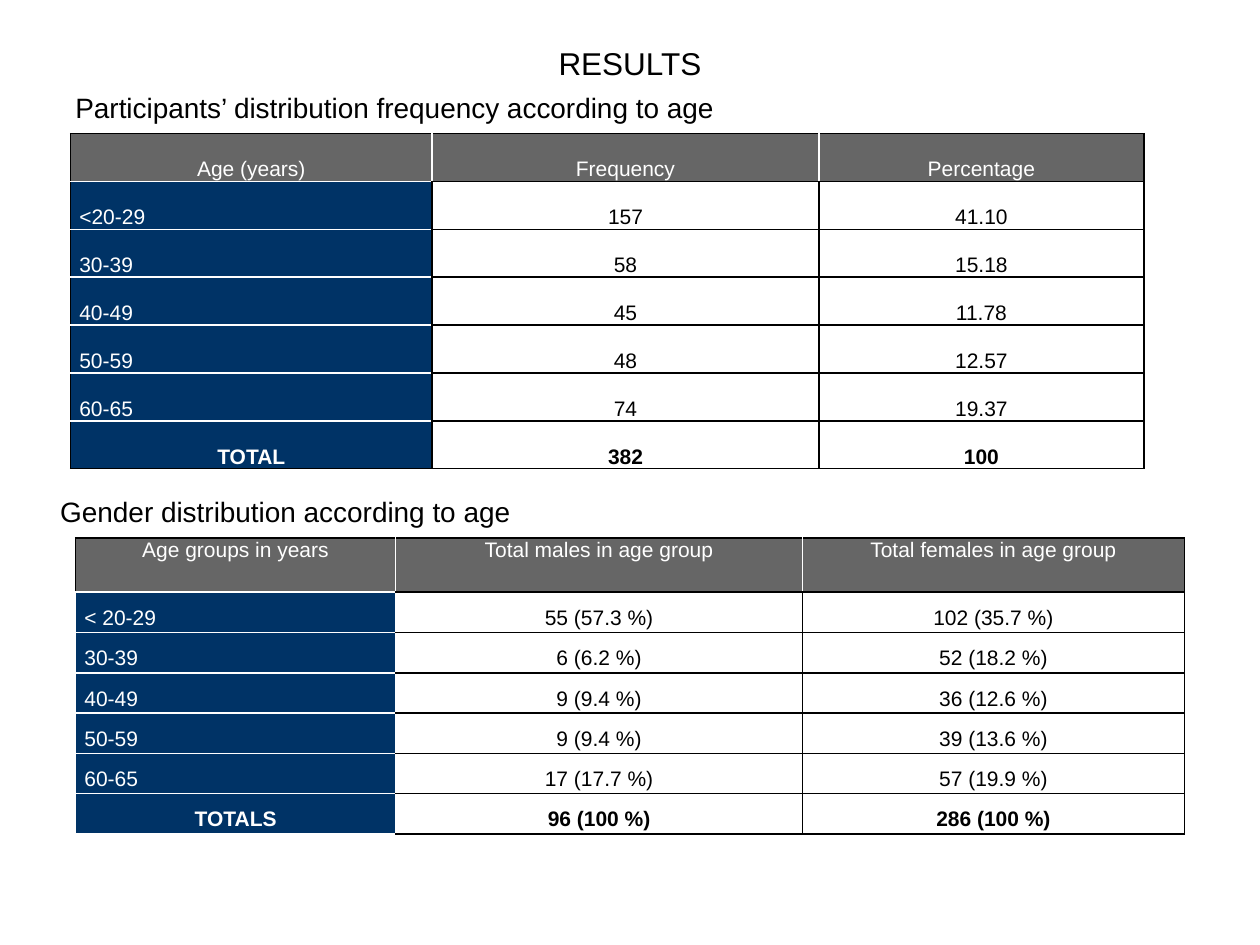
import dataclasses
import typing

import lxml.etree
import pptx
import pptx.dml.color
import pptx.enum.text
import pptx.oxml
import pptx.oxml.ns
import pptx.util

ALIGN = pptx.enum.text.PP_ALIGN
ANCHOR = pptx.enum.text.MSO_ANCHOR


@dataclasses.dataclass(frozen=True)
class Theme:
    font: str = "Arial"
    black: str = "000000"
    white: str = "FFFFFF"
    head: str = "666666"
    key: str = "003366"
    title: int = 18
    label: int = 16
    cell: int = 12
    line: int = 1


THEME = Theme()


# The slide is a grid of 100 columns and 75 rows
COLS, ROWS = 100, 75
UNIT = pptx.util.Inches(10) // COLS


class Box(typing.NamedTuple):
    left: float
    top: float
    width: float
    height: float


@dataclasses.dataclass(frozen=True)
class Grid:
    left: float
    top: float
    widths: tuple[float, ...]
    head: float  # height of the header row
    row: float  # height of every other row
    side: str  # colour of the outline of the key column
    anchors: tuple  # header row, other rows
    spaces: tuple[float, float]  # line spacing: header row, other rows
    data: tuple[tuple[str, ...], ...]


AGES = Grid(
    5.6, 10.6, (28.7, 30.7, 25.8), 3.8, 3.8, THEME.black,
    (ANCHOR.BOTTOM, ANCHOR.BOTTOM), (1.5, 1.5),
    (
        ("Age (years)", "Frequency", "Percentage"),
        ("<20-29", "157", "41.10"),
        ("30-39", "58", "15.18"),
        ("40-49", "45", "11.78"),
        ("50-59", "48", "12.57"),
        ("60-65", "74", "19.37"),
        ("TOTAL", "382", "100"),
    ),
)
GENDER = Grid(
    6, 42.7, (25.4, 32.3, 30.3), 4.3, 3.2, THEME.white,
    (ANCHOR.TOP, ANCHOR.MIDDLE), (1.0, 1.5),
    (
        ("Age groups in years", "Total males in age group", "Total females in age group"),
        ("< 20-29", "55 (57.3 %)", "102 (35.7 %)"),
        ("30-39", "6 (6.2 %)", "52 (18.2 %)"),
        ("40-49", "9 (9.4 %)", "36 (12.6 %)"),
        ("50-59", "9 (9.4 %)", "39 (13.6 %)"),
        ("60-65", "17 (17.7 %)", "57 (19.9 %)"),
        ("TOTALS", "96 (100 %)", "286 (100 %)"),
    ),
)


def span(count: float) -> int:
    return round(count * UNIT)


def tint(code: str) -> pptx.dml.color.RGBColor:
    return pptx.dml.color.RGBColor.from_string(code)


def write(frame, text: str, size: int, color: str, align=ALIGN.LEFT,
          bold: bool = False, space: float = 1.0) -> None:
    para = frame.paragraphs[0]
    para.alignment = align
    para.line_spacing = space
    run = para.add_run()
    run.text = text
    run.font.name = THEME.font
    run.font.size = pptx.util.Pt(size)
    run.font.bold = bold
    run.font.color.rgb = tint(color)


def place(shape, box: Box) -> None:
    shape.left, shape.top, shape.width, shape.height = map(span, box)


def label(slide, box: Box, text: str) -> None:
    shape = slide.shapes.add_textbox(*map(span, box))
    shape.text_frame.word_wrap = True
    write(shape.text_frame, text, THEME.label, THEME.black)


def edges(grid: Grid, row: int, col: int) -> dict[str, str]:
    """Border colours by side; neighbours agree on the edge they share."""
    black, white = THEME.black, THEME.white
    last = row == len(grid.data) - 1
    if row == 0:
        return {
            "L": white if col else black,
            "R": black if col == len(grid.widths) - 1 else white,
            "T": black,
            "B": black if col else white,
        }
    if col == 0:
        return {"L": grid.side, "R": grid.side, "T": white,
                "B": grid.side if last else white}
    return {"L": grid.side if col == 1 else black, "R": black, "T": black, "B": black}


def border(cell, colors: dict[str, str]) -> None:
    props = cell._tc.get_or_add_tcPr()
    name = pptx.oxml.ns.qn
    for side, color in colors.items():
        line = lxml.etree.SubElement(props, name(f"a:ln{side}"))
        line.set("w", str(pptx.util.Pt(THEME.line)))
        fill = lxml.etree.SubElement(line, name("a:solidFill"))
        lxml.etree.SubElement(fill, name("a:srgbClr")).set("val", color)


def draw(slide, grid: Grid) -> None:
    count = len(grid.data)
    box = Box(grid.left, grid.top, sum(grid.widths), grid.head + grid.row * (count - 1))
    table = slide.shapes.add_table(count, len(grid.widths), *map(span, box)).table
    for col, width in enumerate(grid.widths):
        table.columns[col].width = span(width)
    for row, texts in enumerate(grid.data):
        table.rows[row].height = span(grid.row if row else grid.head)
        total = row == count - 1
        for col, text in enumerate(texts):
            cell = table.cell(row, col)
            border(cell, edges(grid, row, col))
            fill = THEME.head if row == 0 else THEME.white if col else THEME.key
            cell.fill.solid()
            cell.fill.fore_color.rgb = tint(fill)
            cell.margin_left = cell.margin_right = span(0.7)
            cell.margin_top = cell.margin_bottom = 0
            cell.vertical_anchor = grid.anchors[row > 0]
            color = THEME.black if row and col else THEME.white
            align = ALIGN.CENTER if col or row == 0 or total else ALIGN.LEFT
            write(cell.text_frame, text, THEME.cell, color, align, total,
                  grid.spaces[row > 0])


def main() -> None:
    deck = pptx.Presentation()
    deck.slide_width, deck.slide_height = span(COLS), span(ROWS)
    slide = deck.slides.add_slide(deck.slide_layouts.get_by_name("Title Only"))

    # Title
    title = slide.shapes.title
    place(title, Box(5, 3, 90, 12.5))
    title.text_frame.vertical_anchor = ANCHOR.TOP
    write(title.text_frame, "RESULTS", THEME.title, THEME.black, ALIGN.CENTER)

    # Age table
    label(slide, Box(5, 6.7, 90, 4), "Participants’ distribution frequency according to age")
    draw(slide, AGES)

    # Gender table
    label(slide, Box(3.8, 38.8, 68, 4), "Gender distribution according to age")
    draw(slide, GENDER)

    deck.save("out.pptx")


if __name__ == "__main__":
    main()
